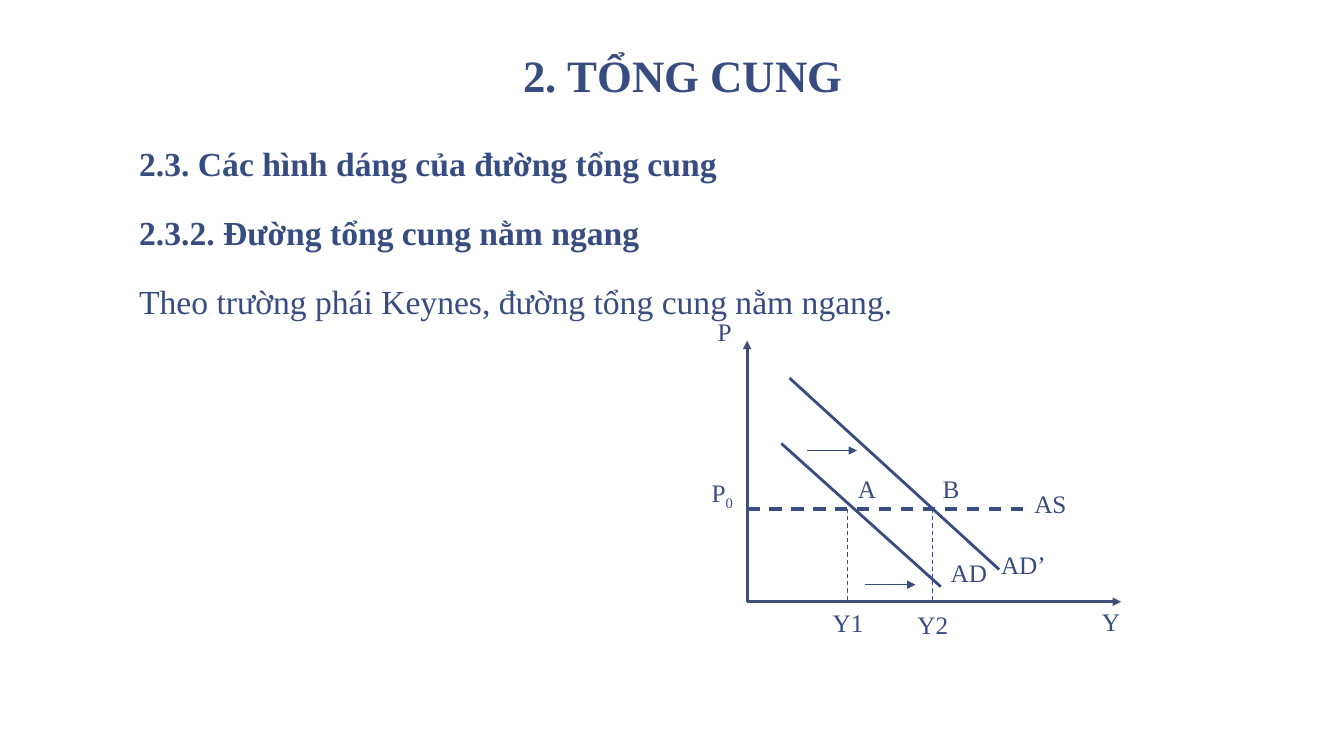
from lxml import etree
from pptx import Presentation
from pptx.dml.color import RGBColor
from pptx.enum.dml import MSO_LINE
from pptx.enum.shapes import MSO_CONNECTOR
from pptx.enum.text import MSO_ANCHOR, PP_ALIGN
from pptx.oxml.ns import qn
from pptx.util import Inches, Pt

STRAIGHT = MSO_CONNECTOR.STRAIGHT
DASH = MSO_LINE.DASH
TOP, BOTTOM = MSO_ANCHOR.TOP, MSO_ANCHOR.BOTTOM
LEFT, CENTER = PP_ALIGN.LEFT, PP_ALIGN.CENTER

NAVY = RGBColor(0x37, 0x4C, 0x81)
AXIS_BLUE = RGBColor(0x41, 0x4E, 0x77)


class SlideBuilder:
    font_name = "Times New Roman"

    def __init__(self, slide):
        self.slide = slide

    def frame(self, left, top, width, height, inset_x, inset_y, anchor=TOP, wrap=True):
        box = self.slide.shapes.add_textbox(
            Inches(left), Inches(top), Inches(width), Inches(height))
        frame = box.text_frame
        frame.word_wrap = wrap
        frame.vertical_anchor = anchor
        frame.margin_left = frame.margin_right = Inches(inset_x)
        frame.margin_top = frame.margin_bottom = Inches(inset_y)
        return frame

    def style(self, paragraph, size, bold=False, align=LEFT, spacing=1.0):
        paragraph.alignment = align
        paragraph.line_spacing = spacing
        font = paragraph.font
        font.name, font.size, font.bold = self.font_name, Pt(size), bold
        font.color.rgb = NAVY

    def title(self, text):
        frame = self.frame(1.22, 0.08, 11.11, 1, 0.13, 0.07, BOTTOM)
        frame.text = text
        self.style(frame.paragraphs[0], 32, True, CENTER, 0.85)

    def body(self, lines):
        frame = self.frame(1.25, 1.15, 11.11, 5.25, 0.13, 0.07)
        frame.text = "\n".join(text for text, _ in lines)
        for index, (paragraph, (_, bold)) in enumerate(zip(frame.paragraphs, lines)):
            self.style(paragraph, 24, bold, spacing=1.5)
            if index:
                paragraph.space_before = Pt(6)

    def label(self, text, left, top, width, subscript="", wrap=True):
        frame = self.frame(left, top, width, 0.4, 0.1, 0.05, wrap=wrap)
        paragraph = frame.paragraphs[0]
        self.style(paragraph, 18, spacing=1.1 if subscript else 1.0)
        paragraph.add_run().text = text
        if subscript:
            index = paragraph.add_run()
            index.text = subscript
            index.font._element.set("baseline", "-25000")

    def line(self, start, end, width, color=NAVY, dash=None, arrow=False):
        connector = self.slide.shapes.add_connector(
            STRAIGHT, *(Inches(value) for value in (*start, *end)))
        connector.line.color.rgb = color
        connector.line.width = Pt(width)
        if dash:
            connector.line.dash_style = dash
        properties = connector._element.spPr
        if arrow:
            etree.SubElement(properties.find(qn("a:ln")), qn("a:tailEnd"), type="triangle")
        etree.SubElement(properties, qn("a:effectLst"))


def main():
    presentation = Presentation()
    presentation.slide_width, presentation.slide_height = Inches(13.33), Inches(7.5)
    builder = SlideBuilder(presentation.slides.add_slide(presentation.slide_layouts[6]))

    # Heading and text
    builder.title("2. TỔNG CUNG")
    builder.body([
        ("2.3. Các hình dáng của đường tổng cung", True),
        ("2.3.2. Đường tổng cung nằm ngang", True),
        ("Theo trường phái Keynes, đường tổng cung nằm ngang.", False),
    ])

    # Horizontal supply curve and drops to the output axis
    origin_x, origin_y, price_y = 7.41, 5.97, 5.05
    builder.line((origin_x, price_y), (10.16, price_y), 2.25, dash=DASH)
    for output_x in (8.41, 9.25):
        builder.line((output_x, price_y), (output_x, origin_y), 0.75, dash=DASH)

    # Shift arrows
    for shift_x, shift_y in ((8, 4.47), (8.58, 5.8)):
        builder.line((shift_x, shift_y), (shift_x + 0.5, shift_y), 0.75, arrow=True)

    # Demand curves
    builder.line((7.75, 4.4), (9.33, 5.82), 2)
    builder.line((7.83, 3.75), (9.91, 5.65), 2)

    # Axes
    builder.line((origin_x, origin_y), (11.12, origin_y), 2, AXIS_BLUE, arrow=True)
    builder.line((origin_x, origin_y), (origin_x, 3.38), 2, AXIS_BLUE, arrow=True)

    # Labels
    for text, left, top, width in (
        ("P", 7.02, 3.09, 0.69),
        ("Y", 10.83, 5.97, 0.58),
        ("A", 8.41, 4.65, 0.42),
        ("B", 9.25, 4.65, 0.42),
        ("AD", 9.33, 5.48, 0.67),
        ("AD’", 9.83, 5.4, 0.75),
        ("AS", 10.16, 4.8, 1.17),
    ):
        builder.label(text, left, top, width)
    builder.label("P", 6.96, 4.65, 0.83, subscript="0")
    builder.label("Y1", 8.16, 5.98, 0.51, wrap=False)
    builder.label("Y2", 9, 6, 0.51, wrap=False)

    presentation.save("out.pptx")


if __name__ == "__main__":
    main()
